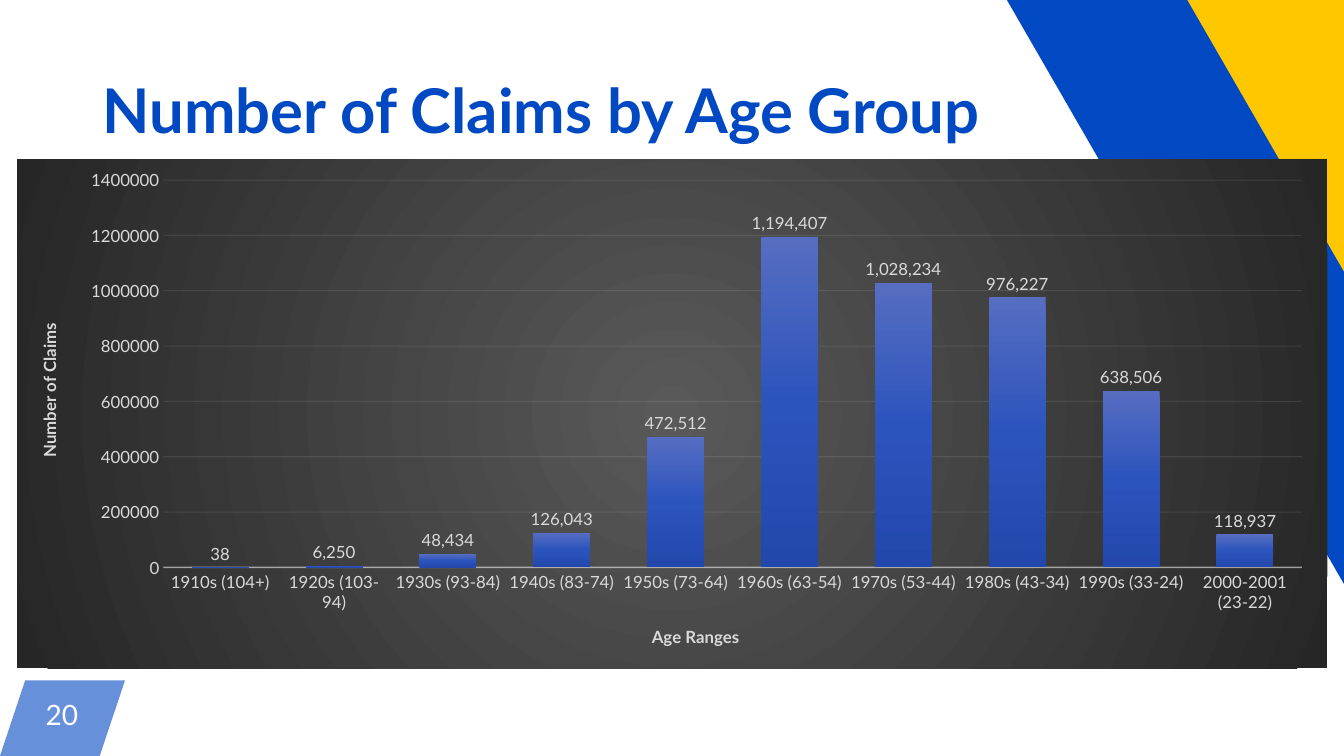
from dataclasses import dataclass

import pptx
import pptx.chart.data
import pptx.dml.color
import pptx.enum.chart
import pptx.enum.text
import pptx.oxml
import pptx.oxml.ns
import pptx.util
from pptx.util import Inches

qn = pptx.oxml.ns.qn
NS = pptx.oxml.ns.nsdecls("a", "c")


@dataclass(frozen=True)
class Theme:
    font: str = "Lato"
    blue: str = "0049C2"
    yellow: str = "FFC700"
    white: str = "FFFFFF"
    label: str = "D9D9D9"
    line: str = "F2F2F2"
    panel: tuple = ((0, "595959"), (100, "262626"))
    bars: tuple = ((0, "566DC1"), (50, "2C54BD"), (100, "2248AD"))
    title_size: int = 44
    number_size: int = 20
    chart_size: int = 12


def rgb(color):
    return pptx.dml.color.RGBColor.from_string(color)


def style_font(font, name, size, color, bold=False):
    font.name, font.size, font.bold = name, pptx.util.Pt(size), bold
    font.color.rgb = rgb(color)


def write_text(tf, text, *, font, size, color, bold=False, align="LEFT", spacing=None):
    tf.word_wrap = True
    p = tf.paragraphs[0]
    p.alignment = getattr(pptx.enum.text.PP_ALIGN, align)
    p.line_spacing = spacing
    r = p.add_run()
    r.text = text
    style_font(r.font, font, size, color, bold)


def add_alpha(fill, percent):
    color = fill._xPr.find(".//" + qn("a:srgbClr"))
    color.append(pptx.oxml.parse_xml(f'<a:alpha {NS} val="{percent * 1000}"/>'))


def gradient(stops, direction):
    gs = "".join(f'<a:gs pos="{pos * 1000}"><a:srgbClr val="{color}"/></a:gs>'
                 for pos, color in stops)
    return f'<a:gradFill {NS}><a:gsLst>{gs}</a:gsLst>{direction}</a:gradFill>'


def place(parent, index, x, y, w=None, h=None, inner=False):
    """Fix the position of a chart part, in fractions of the chart."""
    for old in parent.findall(qn("c:layout")):
        parent.remove(old)
    parts = '<c:layoutTarget val="inner"/>' if inner else ""
    parts += '<c:xMode val="edge"/><c:yMode val="edge"/>'
    parts += "".join(f'<c:{key} val="{value}"/>'
                     for key, value in zip("xywh", (x, y, w, h)) if value is not None)
    parent.insert(index, pptx.oxml.parse_xml(
        f"<c:layout {NS}><c:manualLayout>{parts}</c:manualLayout></c:layout>"))


class SlideBuilder:
    def __init__(self, prs, theme):
        self.theme = theme
        self.s = prs.slides.add_slide(prs.slide_layouts[5])

    def polygon(self, points, color, alpha=None):
        pts = [(Inches(x), Inches(y)) for x, y in points]
        builder = self.s.shapes.build_freeform(*pts[0], scale=1.0)
        builder.add_line_segments(pts[1:], close=True)
        sp = builder.convert_to_shape()
        sp.shadow.inherit = False
        sp.fill.solid()
        sp.fill.fore_color.rgb = rgb(color)
        sp.line.fill.background()
        if alpha is not None:
            add_alpha(sp.fill, alpha)

    def title(self, text, box):
        t, sp = self.theme, self.s.shapes.title
        sp.left, sp.top, sp.width, sp.height = map(Inches, box)
        sp.text_frame.auto_size = pptx.enum.text.MSO_AUTO_SIZE.NONE
        sp.text_frame.vertical_anchor = pptx.enum.text.MSO_ANCHOR.MIDDLE
        write_text(sp.text_frame, text, font=t.font, size=t.title_size,
                   color=t.blue, bold=True, spacing=0.9)

    def page_number(self, text, box):
        t = self.theme
        tf = self.s.shapes.add_textbox(*map(Inches, box)).text_frame
        tf.margin_left = tf.margin_right = tf.margin_top = tf.margin_bottom = Inches(0.04)
        tf.vertical_anchor = pptx.enum.text.MSO_ANCHOR.MIDDLE
        write_text(tf, text, font=t.font, size=t.number_size, color=t.white,
                   align="CENTER", spacing=pptx.util.Pt(17.7))

    def axis(self, axis, title, x, y):
        t = self.theme
        axis.major_tick_mark = axis.minor_tick_mark = pptx.enum.chart.XL_TICK_MARK.NONE
        style_font(axis.tick_labels.font, t.font, t.chart_size, t.label)
        write_text(axis.axis_title.text_frame, title, font=t.font,
                   size=t.chart_size, color=t.label, bold=True, align="CENTER")
        place(axis.axis_title._element, 1, x, y)

    def line(self, line, width, alpha):
        line.width = pptx.util.Pt(width)
        line.color.rgb = rgb(self.theme.line)
        add_alpha(line.fill, alpha)

    def column_chart(self, box, cats, vals, x_title, y_title):
        t = self.theme
        data = pptx.chart.data.CategoryChartData()
        data.categories = cats
        data.add_series("Series 1", vals)
        chart = self.s.shapes.add_chart(
            pptx.enum.chart.XL_CHART_TYPE.COLUMN_CLUSTERED, *map(Inches, box), data).chart
        chart.has_title = chart.has_legend = False
        style_font(chart.font, t.font, t.chart_size, t.label)

        # Dark panel and plot area
        space = chart._chartSpace
        circle = ('<a:path path="circle"><a:fillToRect l="50000" t="50000" '
                  'r="50000" b="50000"/></a:path>')
        space.find(qn("c:chart")).addnext(pptx.oxml.parse_xml(
            f"<c:spPr {NS}>{gradient(t.panel, circle)}<a:ln><a:noFill/></a:ln></c:spPr>"))
        place(space.find(".//" + qn("c:plotArea")), 0, 0.1115, 0.041, 0.869, 0.761, True)

        # Axes
        self.axis(chart.category_axis, x_title, 0.482, 0.909)
        self.line(chart.category_axis.format.line, 1, 54)
        val_axis = chart.value_axis
        self.axis(val_axis, y_title, 0.013, 0.316)
        val_axis.format.line.fill.background()
        val_axis.minimum_scale, val_axis.maximum_scale = 0, 1400000
        val_axis.major_unit = 200000
        val_axis.tick_labels.number_format = "0"
        val_axis.tick_labels.number_format_is_linked = False
        self.line(val_axis.major_gridlines.format.line, 0.75, 10)

        # Columns and their labels
        plot = chart.plots[0]
        plot.gap_width, plot.overlap, plot.vary_by_categories = 100, -24, False
        spPr = plot.series[0]._element.get_or_add_spPr()
        spPr.append(pptx.oxml.parse_xml(
            gradient(t.bars, '<a:lin ang="5400000" scaled="0"/>')))
        labels = plot.series[0].data_labels
        labels.show_value = True
        labels.position = pptx.enum.chart.XL_LABEL_POSITION.OUTSIDE_END
        labels.number_format, labels.number_format_is_linked = "#,##0", False
        style_font(labels.font, t.font, t.chart_size, t.label)


def main():
    prs = pptx.Presentation()
    prs.slide_width, prs.slide_height = Inches(40 / 3), Inches(7.5)
    theme = Theme()
    slide = SlideBuilder(prs, theme)

    # Page number tab and corner bands, which run past the slide's edge
    slide.polygon([(0.25, 6.75), (1.24, 6.75), (0.99, 7.5), (0, 7.5)], theme.blue, 60)
    slide.page_number("20", (0.25, 6.75, 0.73, 0.75))
    slide.polygon([(10.47, -2.17), (12.18, -3.15), (17.06, 5.36), (15.35, 6.33)],
                  theme.yellow)
    slide.polygon([(9.47, -0.9), (10.81, -1.68), (15.71, 6.82), (14.37, 7.59)],
                  theme.blue)

    # Title and chart
    slide.title("Number of Claims by Age Group", (0.92, 0.4, 11.5, 1.45))
    claims = {
        "1910s (104+)": 38, "1920s (103-94)": 6250, "1930s (93-84)": 48434,
        "1940s (83-74)": 126043, "1950s (73-64)": 472512, "1960s (63-54)": 1194407,
        "1970s (53-44)": 1028234, "1980s (43-34)": 976227, "1990s (33-24)": 638506,
        "2000-2001 (23-22)": 118937,
    }
    slide.column_chart((0.17, 1.58, 13, 5.05), list(claims), list(claims.values()),
                       "Age Ranges", "Number of Claims")
    # Keep the title above the bands
    tree = slide.s.shapes._spTree
    tree.insert(tree.index(slide.s.shapes[-1]._element), slide.s.shapes.title._element)
    prs.save("out.pptx")


if __name__ == "__main__":
    main()
